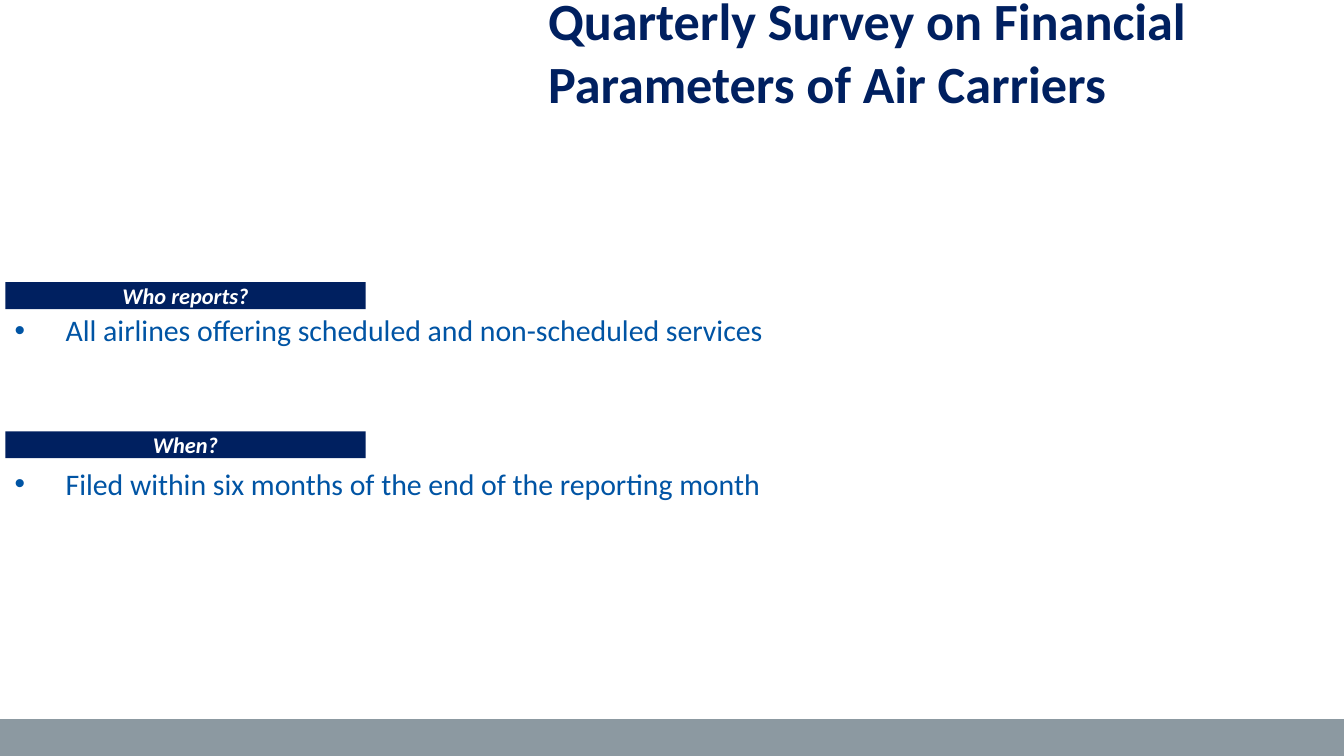
import pptx
import pptx.dml.color
import pptx.enum.shapes
import pptx.enum.text
import pptx.oxml.ns
import pptx.util
from lxml import etree

WIDTH = 10
HEIGHT = WIDTH * 9 / 16
NAVY, BLUE, GREY, WHITE = "002060", "0054A4", "8C99A1", "FFFFFF"
BAR_LEFT, BAR_WIDTH, BAR_HEIGHT = 0.04, 2.68, 0.2
FIRST_BAR, BAR_STEP = 2.1, 1.11
FOOTER_TOP = 5.35

SECTIONS = [
    ("Who reports?", "All airlines offering scheduled and non-scheduled services"),
    ("When?", "Filed within six months of the end of the reporting month"),
]


def color(value):
    return pptx.dml.color.RGBColor.from_string(value)


def inches(*lengths):
    return [pptx.util.Inches(n) for n in lengths]


def add_text(p, text, size=16, fill=BLUE, bold=False, italic=False, align=None):
    r = p.add_run()
    r.text = text
    r.font.name = "Calibri"
    r.font.size = pptx.util.Pt(size)
    r.font.color.rgb = color(fill)
    r.font.bold, r.font.italic = bold, italic
    p.alignment = align


def add_box(s, *place):
    tf = s.shapes.add_textbox(*inches(*place)).text_frame
    tf.word_wrap = True
    return tf


def add_bar(s, fill, *place):
    sp = s.shapes.add_shape(pptx.enum.shapes.MSO_SHAPE.RECTANGLE, *inches(*place))
    sp.shadow.inherit = False
    sp.fill.solid()
    sp.fill.fore_color.rgb = color(fill)
    sp.line.fill.background()
    return sp.text_frame


def add_bullet(p, indent=0.38):
    pPr = p._p.get_or_add_pPr()
    pPr.set("marL", str(pptx.util.Inches(indent)))
    pPr.set("indent", str(-pptx.util.Inches(indent)))
    qn = pptx.oxml.ns.qn
    etree.SubElement(pPr, qn("a:buFont")).set("typeface", "Arial")
    etree.SubElement(pPr, qn("a:buChar")).set("char", "•")


def main():
    prs = pptx.Presentation()
    prs.slide_width, prs.slide_height = inches(WIDTH, HEIGHT)
    s = prs.slides.add_slide(prs.slide_layouts[6])
    middle = pptx.enum.text.MSO_ANCHOR.MIDDLE

    # Footer band
    add_bar(s, GREY, 0, FOOTER_TOP, WIDTH, HEIGHT - FOOTER_TOP)

    # Answers, spaced to sit under their headings
    tf = add_box(s, 0.01, 2.3, 9.88, 3.19)
    for i, (_, answer) in enumerate(SECTIONS):
        p = tf.add_paragraph() if i else tf.paragraphs[0]
        add_bullet(p)
        p.line_spacing = 0.9
        p.space_before = pptx.util.Pt(65 if i else 0)
        add_text(p, answer)

    # Title
    tf = add_box(s, 3.98, -0.04, 6.02, 0.84)
    tf.vertical_anchor = middle
    add_text(tf.paragraphs[0], "Quarterly Survey on Financial Parameters of Air Carriers",
             size=28, fill=NAVY, bold=True)

    # Section headings
    for i, (heading, _) in enumerate(SECTIONS):
        tf = add_bar(s, NAVY, BAR_LEFT, FIRST_BAR + i * BAR_STEP, BAR_WIDTH, BAR_HEIGHT)
        tf.vertical_anchor = middle
        add_text(tf.paragraphs[0], heading, size=12, fill=WHITE, bold=True, italic=True,
                 align=pptx.enum.text.PP_ALIGN.CENTER)

    prs.save("out.pptx")


if __name__ == "__main__":
    main()
